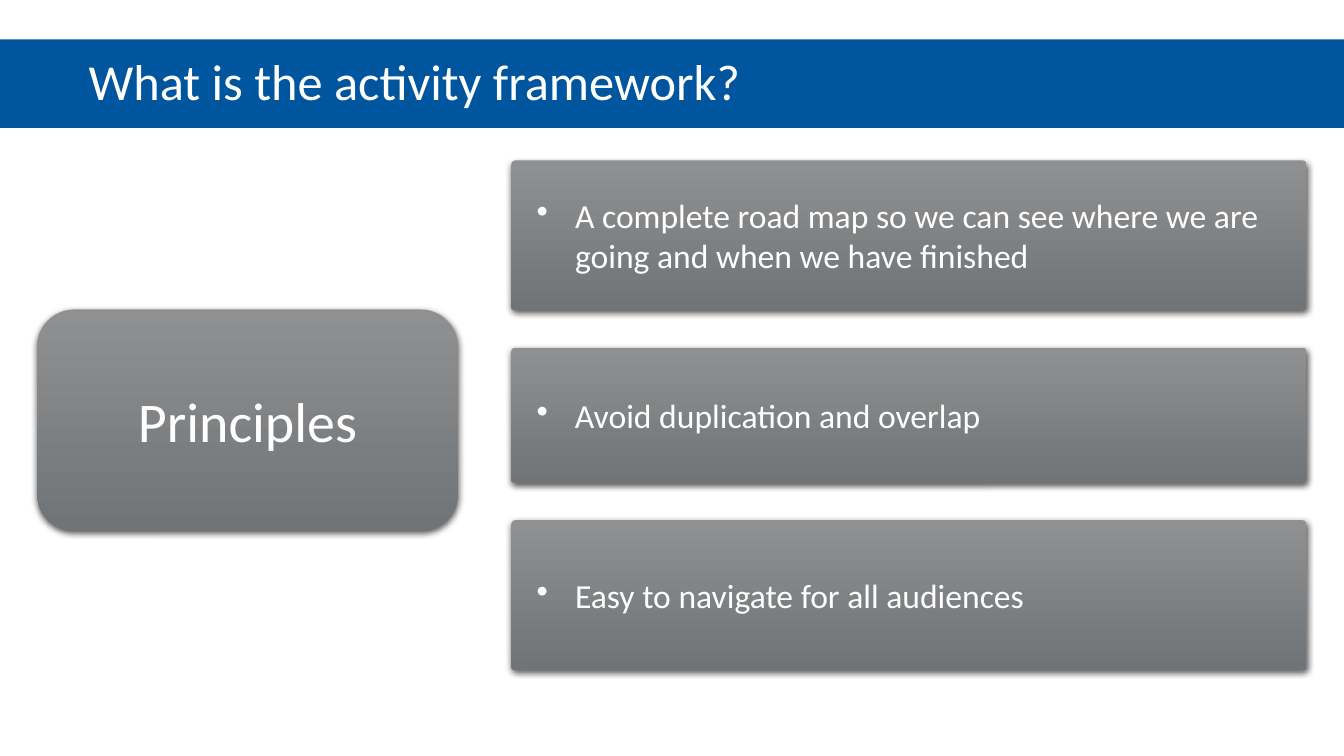
import lxml.etree
import pptx
import pptx.dml.color
import pptx.enum.shapes
import pptx.enum.text
import pptx.oxml
import pptx.oxml.ns
import pptx.util

Inches = pptx.util.Inches
Pt = pptx.util.Pt
SHAPES = pptx.enum.shapes.MSO_SHAPE
ALIGN = pptx.enum.text.PP_ALIGN
WHITE = pptx.dml.color.RGBColor(0xFF, 0xFF, 0xFF)
BLUE = pptx.dml.color.RGBColor(0x00, 0x55, 0x9F)
GREY_TOP = pptx.dml.color.RGBColor(0x8E, 0x90, 0x92)
GREY_BOTTOM = pptx.dml.color.RGBColor(0x71, 0x74, 0x76)
SHADOW = (
    f'<a:outerShdw {pptx.oxml.ns.nsdecls("a")} blurRad="{Pt(4.5)}" dist="{Pt(1.5)}" '
    'dir="5400000" rotWithShape="0"><a:srgbClr val="000000">'
    '<a:alpha val="63000"/></a:srgbClr></a:outerShdw>'
)

presentation = pptx.Presentation()
presentation.slide_width = Inches(13.33)
presentation.slide_height = Inches(7.5)
slide = presentation.slides.add_slide(presentation.slide_layouts[6])


def add_panel(kind, left, top, width, height, text, size, align):
    """Add a borderless shape with one white paragraph, centred vertically."""
    panel = slide.shapes.add_shape(
        kind, Inches(left), Inches(top), Inches(width), Inches(height))
    panel.shadow.inherit = False
    panel.line.fill.background()
    frame = panel.text_frame
    frame.word_wrap = True
    frame.vertical_anchor = pptx.enum.text.MSO_ANCHOR.MIDDLE
    paragraph = frame.paragraphs[0]
    paragraph.text = text
    paragraph.alignment = align
    if kind == SHAPES.ROUNDED_RECTANGLE and align == ALIGN.LEFT:
        properties = paragraph._p.get_or_add_pPr()
        properties.set("marL", str(Inches(0.38)))
        properties.set("indent", str(-Inches(0.38)))
        bullet = lxml.etree.SubElement(properties, pptx.oxml.ns.qn("a:buChar"))
        bullet.set("char", "•")
    paragraph.font.name = "Calibri"
    paragraph.font.size = Pt(size)
    paragraph.font.color.rgb = WHITE
    return panel


def shade(panel):
    """Give a panel the grey gradient and the soft shadow below."""
    panel.fill.gradient()
    panel.fill.gradient_angle = 270
    for stop, color in zip(panel.fill.gradient_stops, (GREY_TOP, GREY_BOTTOM)):
        stop.color.rgb = color
        stop.position = 0 if color == GREY_TOP else 1
    effects = panel._element.spPr.find(pptx.oxml.ns.qn("a:effectLst"))
    effects.append(pptx.oxml.parse_xml(SHADOW))


# Title band
title = add_panel(SHAPES.RECTANGLE, 0, 0.39, 13.33, 0.88,
                  "What is the activity framework?", 36, ALIGN.LEFT)
title.fill.solid()
title.fill.fore_color.rgb = BLUE
title_line = title.text_frame.paragraphs[0]
title_line.line_spacing = 0.9
title_line._p.get_or_add_pPr().set("marL", str(Inches(0.78)))

# Heading on the left
shade(add_panel(SHAPES.ROUNDED_RECTANGLE, 0.37, 3.07, 4.17, 2.2,
                "Principles", 40, ALIGN.CENTER))

# Principles stacked on the right
GAP = 0.37
top = 1.59
for text, height in (
    ("A complete road map so we can see where we are going and when we have finished", 1.49),
    ("Avoid duplication and overlap", 1.34),
    ("Easy to navigate for all audiences", 1.49),
):
    principle = add_panel(SHAPES.ROUNDED_RECTANGLE, 5.07, top, 7.89, height,
                          text, 24, ALIGN.LEFT)
    shade(principle)
    principle.adjustments[0] = 0.03
    frame = principle.text_frame
    frame.margin_left = Inches(0.24)
    frame.margin_right = Inches(0.1)
    frame.margin_top = frame.margin_bottom = 0
    frame.paragraphs[0].space_after = Pt(12)
    top += height + GAP

presentation.save("out.pptx")
